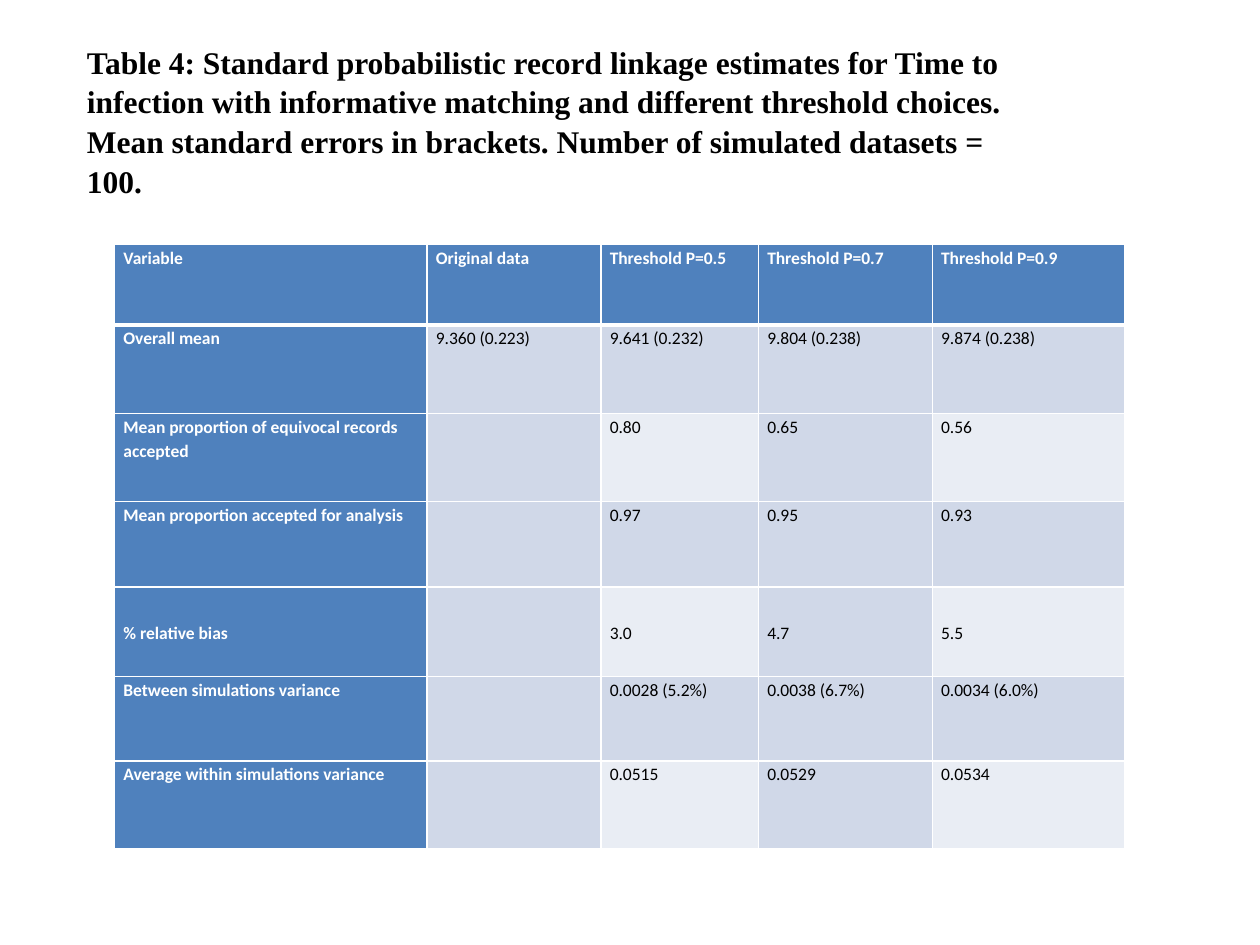
from lxml import etree
from pptx import Presentation
from pptx.dml.color import RGBColor
from pptx.enum.text import MSO_ANCHOR, MSO_AUTO_SIZE, PP_ALIGN
from pptx.oxml.ns import qn
from pptx.util import Inches, Pt

LEFT, JUSTIFY = PP_ALIGN.LEFT, PP_ALIGN.JUSTIFY
TOP, MIDDLE = MSO_ANCHOR.TOP, MSO_ANCHOR.MIDDLE
GROW = MSO_AUTO_SIZE.SHAPE_TO_FIT_TEXT

# Content
TITLE = (
    "Table 4: Standard probabilistic record linkage estimates for Time to "
    "infection with informative matching and different threshold choices. "
    "Mean standard errors in brackets. Number of simulated datasets = 100."
)
ROWS = [
    ("Variable", "Original data", "Threshold P=0.5", "Threshold P=0.7", "Threshold P=0.9"),
    ("Overall mean", "9.360 (0.223)", "9.641 (0.232)", "9.804 (0.238)", "9.874 (0.238)"),
    ("Mean proportion of equivocal records accepted", "", "0.80", "0.65", "0.56"),
    ("Mean proportion accepted for analysis", "", "0.97", "0.95", "0.93"),
    ("% relative bias", "", "3.0", "4.7", "5.5"),
    ("Between simulations variance", "", "0.0028 (5.2%)", "0.0038 (6.7%)", "0.0034 (6.0%)"),
    ("Average within simulations variance", "", "0.0515", "0.0529", "0.0534"),
]
COLUMN_WIDTHS = [2.48, 1.38, 1.25, 1.38, 1.53]
ROW_HEIGHTS = [0.64, 0.7, 0.7, 0.68, 0.71, 0.67, 0.7]
CENTRED_ROW = 4
COLORS = {"header": "4F81BD", "dark": "D0D8E8", "light": "E9EDF4",
          "white": "FFFFFF", "black": "000000"}
CELL_MARGINS = {"margin_left": Inches(0.07), "margin_right": Inches(0.07),
                "margin_top": 0, "margin_bottom": 0}


def set_attributes(target, values):
    for name, value in values.items():
        setattr(target, name, value)


def write_text(frame, text, paragraph_format, font_format, color):
    paragraph = frame.paragraphs[0]
    set_attributes(paragraph, paragraph_format)
    if text:
        run = paragraph.add_run()
        run.text = text
        set_attributes(run.font, font_format)
        run.font.color.rgb = RGBColor.from_string(COLORS[color])


def set_borders(cell, widths):
    """Draw white borders; widths maps a side (L, R, T, B) to points."""
    properties = cell._tc.get_or_add_tcPr()
    for position, (side, width) in enumerate(widths.items()):
        line = etree.Element(qn(f"a:ln{side}"), w=str(Pt(width)))
        fill = etree.SubElement(line, qn("a:solidFill"))
        etree.SubElement(fill, qn("a:srgbClr"), val=COLORS["white"])
        properties.insert(position, line)


def fill_name(row, column):
    if row == 0 or column == 0:
        return "header"
    # Even rows alternate; the original-data and P=0.7 columns stay dark
    return "light" if row % 2 == 0 and column % 2 == 0 else "dark"


def add_title(slide):
    title = slide.shapes.title
    set_attributes(title, {"left": Inches(0.59), "top": Inches(0.3),
                           "width": Inches(7.56), "height": Inches(1.31)})
    set_attributes(title.text_frame, {"word_wrap": True, "vertical_anchor": MIDDLE,
                                      "auto_size": GROW})
    write_text(title.text_frame, TITLE, {"alignment": LEFT, "line_spacing": 1.05},
               {"name": "Times New Roman", "size": Pt(18), "bold": True}, "black")


def add_estimates_table(slide):
    frame = slide.shapes.add_table(
        len(ROWS), len(COLUMN_WIDTHS), Inches(0.91), Inches(1.94),
        Inches(sum(COLUMN_WIDTHS)), Inches(sum(ROW_HEIGHTS)))
    table = frame.table
    set_attributes(table, {"first_row": True, "first_col": True, "horz_banding": False})
    for column, width in zip(table.columns, COLUMN_WIDTHS):
        column.width = Inches(width)
    for row, height in zip(table.rows, ROW_HEIGHTS):
        row.height = Inches(height)

    for row, texts in enumerate(ROWS):
        for column, text in enumerate(texts):
            cell = table.cell(row, column)
            name = fill_name(row, column)
            is_header = name == "header"
            set_attributes(cell, CELL_MARGINS)
            cell.vertical_anchor = MIDDLE if row == CENTRED_ROW else TOP
            cell.fill.solid()
            cell.fill.fore_color.rgb = RGBColor.from_string(COLORS[name])
            set_borders(cell, {"L": 1, "R": 1, "T": 3 if row == 1 else 1,
                               "B": 3 if row == 0 else 1})
            write_text(cell.text_frame, text,
                       {"alignment": JUSTIFY if column else LEFT,
                        "line_spacing": 1.15, "space_after": Pt(10)},
                       {"name": "Calibri", "size": Pt(10), "bold": is_header},
                       "white" if is_header else "black")


def main():
    presentation = Presentation()
    presentation.slide_width, presentation.slide_height = Inches(10), Inches(7.5)
    slide = presentation.slides.add_slide(presentation.slide_layouts[5])
    add_estimates_table(slide)
    add_title(slide)
    presentation.save("out.pptx")


if __name__ == "__main__":
    main()
